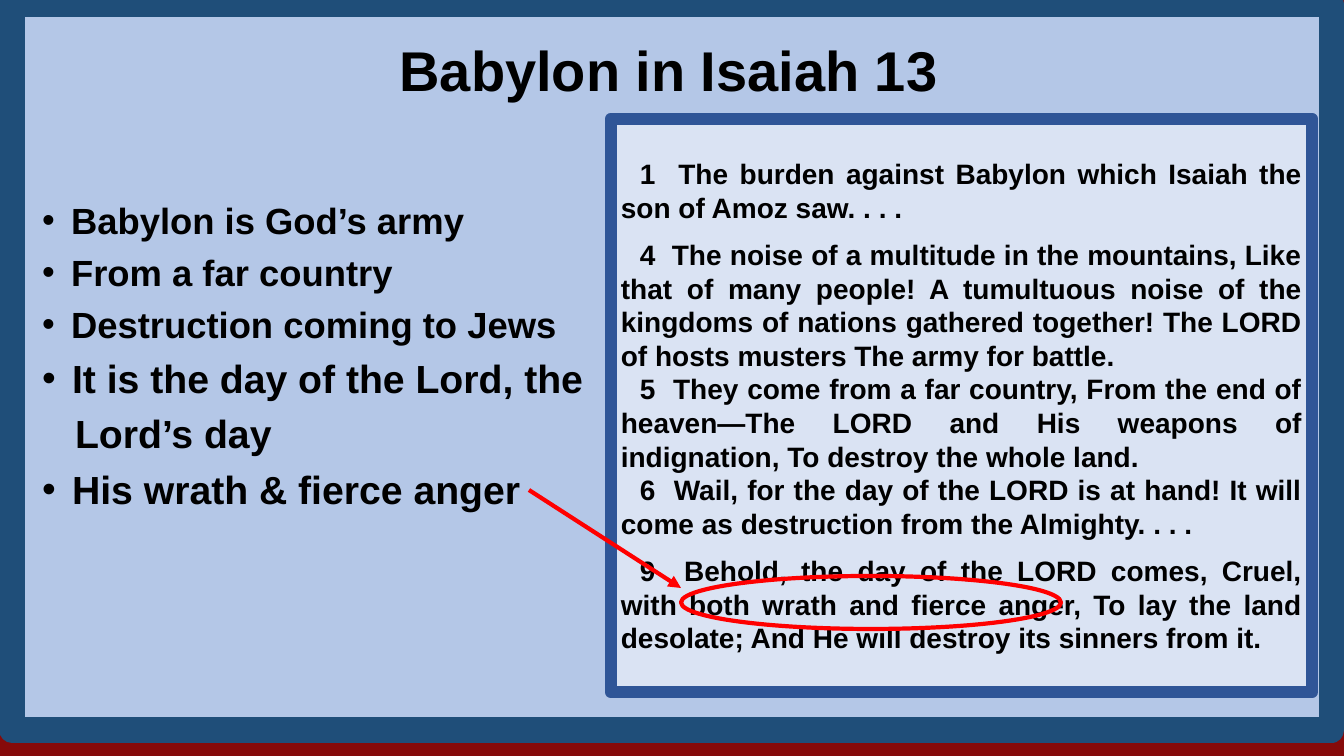
from pptx import Presentation
from pptx.dml.color import RGBColor
from pptx.enum.shapes import MSO_CONNECTOR, MSO_SHAPE
from pptx.enum.text import MSO_ANCHOR, MSO_AUTO_SIZE, PP_ALIGN
from pptx.oxml.ns import qn
from pptx.util import Pt
from lxml.etree import SubElement

EMU_PER_PX = 914400 / 100.8
COLORS = {
    "background": "860A0A", "panel": "B4C7E7", "frame": "1F4E79",
    "passage": "DAE3F3", "passage_border": "2F5597",
    "text": "000000", "highlight": "FF0000",
}

# Bullet text, size in points, left margin in px, bulleted or not
POINTS = [
    ("Babylon is God’s army", 26, 29, True),
    ("From a far country", 26, 29, True),
    ("Destruction coming to Jews", 26, 29, True),
    ("It is the day of the Lord, the", 28, 30, True),
    ("Lord’s day", 28, 33, False),
    ("His wrath & fierce anger", 28, 30, True),
]

# Verse text and space before it in points
VERSES = [
    ("1  The burden against Babylon which Isaiah the son of Amoz saw. . . .", 0),
    ("4  The noise of a multitude in the mountains, Like that of many people! "
     "A tumultuous noise of the kingdoms of nations gathered together! "
     "The LORD of hosts musters The army for battle.", 9.6),
    ("5  They come from a far country, From the end of heaven—The LORD and His "
     "weapons of indignation, To destroy the whole land.", 0),
    ("6  Wail, for the day of the LORD is at hand! It will come as destruction "
     "from the Almighty. . . .", 0),
    ("9  Behold, the day of the LORD comes, Cruel, with both wrath and fierce "
     "anger, To lay the land desolate; And He will destroy its sinners from it.", 9.6),
]


def px(length):
    return round(length * EMU_PER_PX)


def color(name):
    return RGBColor.from_string(COLORS[name])


class SlideBuilder:
    font_name = "Arial"

    def __init__(self, slide):
        self.slide = slide

    def background(self, name):
        fill = self.slide.background.fill
        fill.solid()
        fill.fore_color.rgb = color(name)

    def outline(self, item, name, width):
        item.line.color.rgb = color(name)
        item.line.width = Pt(width)

    def shape(self, kind, box, fill, line, width):
        shape = self.slide.shapes.add_shape(kind, *map(px, box))
        shape.shadow.inherit = False
        if fill:
            shape.fill.solid()
            shape.fill.fore_color.rgb = color(fill)
        else:
            shape.fill.background()
        self.outline(shape, line, width)
        return shape

    def arrow(self, start, end, name, width):
        connector = self.slide.shapes.add_connector(
            MSO_CONNECTOR.STRAIGHT, *map(px, start + end))
        self.outline(connector, name, width)
        SubElement(connector.line._get_or_add_ln(), qn("a:tailEnd"), type="triangle")
        SubElement(connector._element.spPr, qn("a:effectLst"))

    def placeholder(self, index, box):
        shape = self.slide.placeholders[index]
        shape.left, shape.top, shape.width, shape.height = map(px, box)
        # Bring the text in front of the panel
        self.slide.shapes._spTree.append(shape._element)
        return self.prepare(shape, MSO_ANCHOR.TOP)

    def prepare(self, shape, anchor):
        frame = shape.text_frame
        frame.word_wrap = True
        frame.auto_size = MSO_AUTO_SIZE.NONE
        frame.vertical_anchor = anchor
        return frame

    def paragraphs(self, frame, texts):
        frame.text = "\n".join(texts)
        return frame.paragraphs

    def format(self, paragraph, size, align, before=0, after=0):
        paragraph.alignment = align
        paragraph.space_before = Pt(before)
        paragraph.space_after = Pt(after)
        for run in paragraph.runs:
            run.font.name = self.font_name
            run.font.size = Pt(size)
            run.font.bold = True
            run.font.color.rgb = color("text")

    def indent(self, paragraph, margin, first_line, bullet=False):
        properties = paragraph._p.get_or_add_pPr()
        properties.set("marL", str(px(margin)))
        properties.set("indent", str(px(first_line)))
        if bullet:
            SubElement(properties, qn("a:buFont"), typeface=self.font_name)
            SubElement(properties, qn("a:buChar"), char="•")
        else:
            SubElement(properties, qn("a:buNone"))

    def title(self, text, box):
        frame = self.placeholder(0, box)
        frame.text = text
        self.format(frame.paragraphs[0], 40, PP_ALIGN.CENTER)

    def bullets(self, points, box):
        frame = self.placeholder(1, box)
        paragraphs = self.paragraphs(frame, [point[0] for point in points])
        for paragraph, (_, size, margin, bullet) in zip(paragraphs, points):
            self.format(paragraph, size, PP_ALIGN.LEFT, after=6)
            self.indent(paragraph, margin, -margin if bullet else 0, bullet)

    def passage(self, verses, box):
        shape = self.shape(MSO_SHAPE.RECTANGLE, box, "passage", "passage_border", 9)
        frame = self.prepare(shape, MSO_ANCHOR.MIDDLE)
        paragraphs = self.paragraphs(frame, [verse[0] for verse in verses])
        for paragraph, (_, before) in zip(paragraphs, verses):
            self.format(paragraph, 20, PP_ALIGN.JUSTIFY, before=before)
            self.indent(paragraph, 0, 19)


def main():
    presentation = Presentation()
    presentation.slide_width, presentation.slide_height = px(1344), px(756)
    slide = presentation.slides.add_slide(presentation.slide_layouts[1])
    builder = SlideBuilder(slide)

    # Framed panel
    builder.background("background")
    builder.shape(MSO_SHAPE.RECTANGLE, (12, 4, 1320, 726), "panel", "frame", 18)

    # Passage, title and list
    builder.passage(VERSES, (611, 119, 701, 573))
    builder.bullets(POINTS, (32, 193, 567, 328))
    builder.title("Babylon in Isaiah 13", (26, 30, 1285, 78))

    # Highlighted words
    builder.arrow((529, 490), (681, 588), "highlight", 3)
    builder.shape(MSO_SHAPE.OVAL, (681, 576, 380, 53), None, "highlight", 3)

    presentation.save("out.pptx")


if __name__ == "__main__":
    main()
